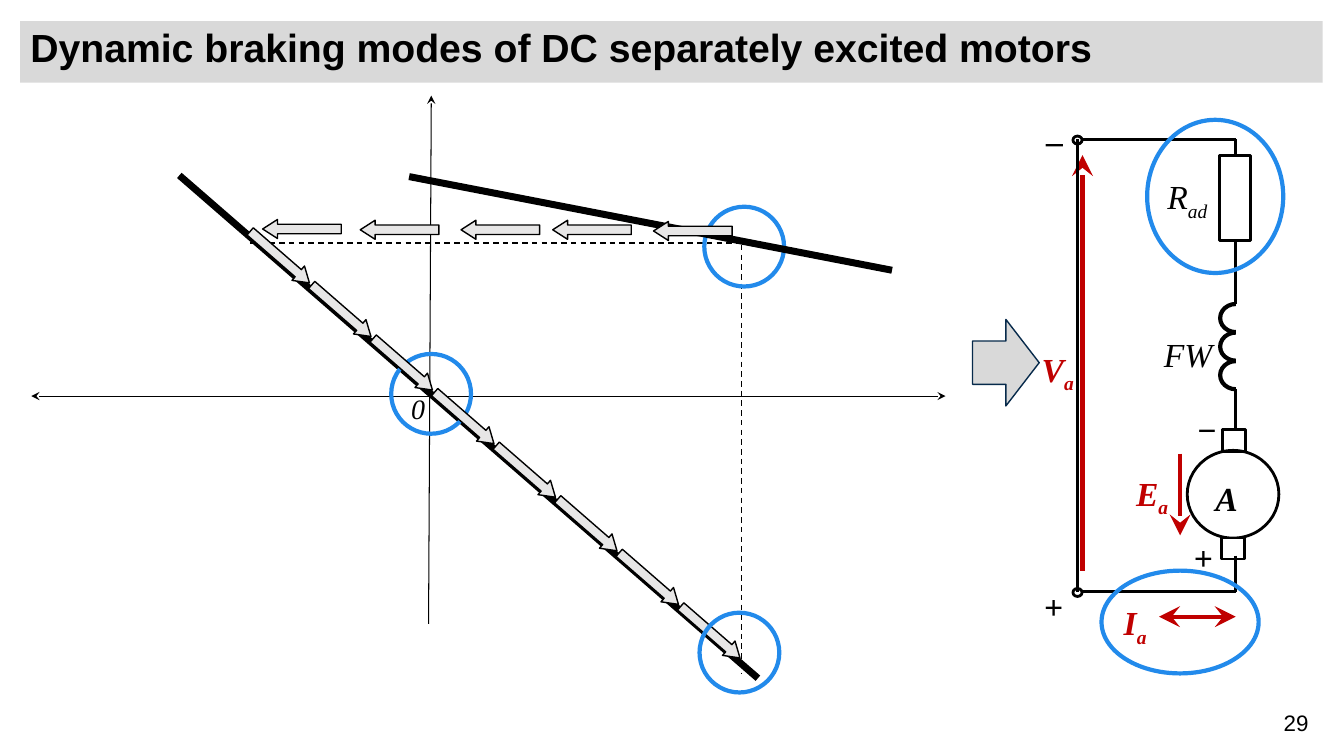
from lxml import etree
from pptx import Presentation
from pptx.dml.color import RGBColor
from pptx.enum import dml, shapes, text
from pptx.oxml import ns
from pptx.util import Cm, Pt

BLACK = RGBColor(0x00, 0x00, 0x00)
WHITE = RGBColor(0xFF, 0xFF, 0xFF)
RED = RGBColor(0xC0, 0x00, 0x00)
BLUE = RGBColor(0x22, 0x8A, 0xEB)
GREY = RGBColor(0xD9, 0xD9, 0xD9)
PALE = RGBColor(0xE7, 0xE6, 0xE6)
NAVY = RGBColor(0x07, 0x2A, 0x4B)
SANS, SERIF = "Arial", "Times New Roman"
KIND = shapes.MSO_SHAPE

# Centre of the right branch of the circuit and its two rails
BRANCH, TOP, BASE = 31.14, 3.51, 14.91


def wire(slide, x1, y1, x2, y2, width=2, color=BLACK, head=False, tail=False,
         size="med", dash=False):
    """Straight line, with stealth arrowheads where asked for."""
    line = slide.shapes.add_connector(
        shapes.MSO_CONNECTOR.STRAIGHT, Cm(x1), Cm(y1), Cm(x2), Cm(y2))
    line.line.width = Pt(width)
    line.line.color.rgb = color
    if dash:
        line.line.dash_style = dml.MSO_LINE.DASH
    props = line.line._get_or_add_ln()
    for tag, shown in (("a:headEnd", head), ("a:tailEnd", tail)):
        if shown:
            etree.SubElement(props, ns.qn(tag), type="stealth", w=size, len=size)
    etree.SubElement(line._element.spPr, ns.qn("a:effectLst"))


def shape(slide, kind, x, y, w, h, fill=None, color=BLACK, width=2):
    """Preset shape without shadow or text."""
    item = slide.shapes.add_shape(kind, Cm(x), Cm(y), Cm(w), Cm(h))
    item.shadow.inherit = False
    if fill is None:
        item.fill.background()
    else:
        item.fill.solid()
        item.fill.fore_color.rgb = fill
    if color is None:
        item.line.fill.background()
    else:
        item.line.color.rgb = color
        item.line.width = Pt(width)
    return item


def ring(slide, x, y, w=2.01, h=2.01):
    shape(slide, KIND.OVAL, x, y, w, h, color=BLUE, width=3)


def block(slide, x, y, turn):
    """Thin block arrow that shows the direction of the process."""
    arrow = shape(slide, KIND.UP_ARROW, x, y, 0.48, 1.98, PALE, width=1)
    arrow.adjustments[0] = 0.5
    arrow.adjustments[1] = 0.781
    arrow.rotation = turn


def write(para, words, size, font=SERIF, color=BLACK, bold=False, slant=False,
          sub=False):
    run = para.add_run()
    run.text = words
    run.font.name = font
    run.font.size = Pt(size)
    run.font.bold = bold
    run.font.italic = slant
    run.font.color.rgb = color
    if sub:
        run.font._element.set("baseline", "-25000")


def label(slide, x, y, w, h, main, sub="", color=BLACK, bold=True, fill=None):
    """Circuit symbol in italics, with an optional subscript."""
    box = slide.shapes.add_textbox(Cm(x), Cm(y), Cm(w), Cm(h))
    if fill is not None:
        box.fill.solid()
        box.fill.fore_color.rgb = fill
    frame = box.text_frame
    frame.word_wrap = True
    frame.margin_top = Cm(0.22)
    frame.margin_right = 0
    para = frame.paragraphs[0]
    para.line_spacing = 1.15
    write(para, main, 24, color=color, bold=bold, slant=True)
    if sub:
        write(para, sub, 24, color=color, bold=bold, slant=True, sub=True)


def head(slide):
    title = slide.shapes.title
    title.left, title.top, title.width, title.height = (
        Cm(0.51), Cm(0.53), Cm(32.82), Cm(1.55))
    title.fill.solid()
    title.fill.fore_color.rgb = GREY
    frame = title.text_frame
    frame.auto_size = text.MSO_AUTO_SIZE.NONE
    frame.vertical_anchor = text.MSO_ANCHOR.TOP
    frame.margin_top = Cm(0.2)
    para = frame.paragraphs[0]
    para.alignment = text.PP_ALIGN.LEFT
    para.line_spacing = 0.9
    para.space_before = Pt(0)
    write(para, "Dynamic braking modes of DC separately excited motors", 28,
          SANS, bold=True)


def note(slide, x, y, w, h, words, size, font, slant, wrap):
    box = slide.shapes.add_textbox(Cm(x), Cm(y), Cm(w), Cm(h))
    box.text_frame.word_wrap = wrap
    para = box.text_frame.paragraphs[0]
    if wrap:
        para.alignment = text.PP_ALIGN.CENTER
    write(para, words, size, font, slant=slant)


def graph(slide):
    # Axes and origin
    wire(slide, 10.87, 2.41, 10.8, 15.72, 0.75, head=True)
    wire(slide, 0.79, 9.98, 23.83, 9.98, 0.75, head=True, tail=True)
    note(slide, 10.11, 9.73, 1.14, 1.35, "0", 20, SERIF, True, False)
    # Guides
    wire(slide, 18.69, 6.17, 18.69, 16.97, 1, dash=True)
    wire(slide, 6.3, 6.12, 18.69, 6.12, 1, dash=True)
    # Motor and braking characteristics
    ring(slide, 17.75, 5.21)
    wire(slide, 4.52, 4.42, 19.1, 17.09, 5)
    wire(slide, 10.31, 4.45, 22.48, 6.81, 5)
    ring(slide, 9.86, 8.92)
    # Switch to braking, then slowing down along the line
    for x, y in ((17.22, 4.83), (14.68, 4.8), (12.37, 4.8), (9.83, 4.8), (7.37, 4.78)):
        block(slide, x, y, 270)
    for step in range(8):
        block(slide, 6.81 + 1.55 * step, 5.49 + 1.35 * step, 131)
    ring(slide, 17.63, 15.44)


def circuit(slide):
    # Field winding: three turns with their right half covered
    for turn in (2, 1, 0):
        shape(slide, KIND.OVAL, 30.75, 7.66 + 0.72 * turn, 0.79, 0.71, WHITE, width=3)
    shape(slide, KIND.RECTANGLE, 31.15, 6.18, 1.17, 4.34, WHITE, None)
    # Signs and symbols
    label(slide, 29.91, 9.94, 1.19, 1.63, "−", fill=WHITE)
    label(slide, 29.83, 13.17, 1.19, 1.63, "+", fill=WHITE)
    label(slide, 26.06, 14.4, 1.17, 1.63, "+")
    label(slide, 26.12, 2.65, 1.19, 1.63, "–")
    label(slide, 29.17, 4.05, 1.75, 2.18, "R", "ad", bold=False)
    label(slide, 29.08, 8.05, 1.83, 1.32, "FW", bold=False)
    label(slide, 30.38, 11.66, 1.42, 1.63, "A")
    label(slide, 28.07, 14.78, 1.68, 1.63, "I", "a", RED)
    label(slide, 28.38, 11.52, 1.78, 2.16, "Е", "a", RED)
    label(slide, 26, 8.39, 1.78, 2.16, "V", "a", RED)
    # Resistor, armature and brushes
    shape(slide, KIND.RECTANGLE, 30.73, 3.91, 0.79, 2.16)
    shape(slide, KIND.RECTANGLE, 30.8, 10.83, 0.58, 0.56)
    shape(slide, KIND.OVAL, 29.92, 11.35, 2.31, 2.21)
    shape(slide, KIND.RECTANGLE, 30.78, 13.56, 0.58, 0.53, WHITE)
    # Wires of the branch and both rails with their terminals
    for y1, y2 in ((TOP, 3.91), (6.07, 7.65), (9.8, 10.85), (14, BASE)):
        wire(slide, BRANCH, y1, BRANCH, y2)
    for rail in (TOP, BASE):
        shape(slide, KIND.OVAL, 27.04, rail - 0.08, 0.23, 0.2)
        wire(slide, BRANCH, rail, 27.25, rail)
    # Voltage, back EMF and current arrows
    for ends in ((27.28, 14.38, 27.28, 3.91), (29.74, 11.43, 29.74, 13.49),
                 (29.41, 15.54, BRANCH, 15.54), (30.94, 15.54, 29.21, 15.54)):
        wire(slide, *ends, 3, RED, tail=True, size="lg")
    wire(slide, 27.15, BASE, 27.15, TOP, 2.5)
    # Highlights
    ring(slide, 27.76, 14.38, 3.96, 2.59)
    ring(slide, 28.91, 3.02, 3.43, 3.86)


def main():
    deck = Presentation()
    deck.slide_width, deck.slide_height = Cm(33.87), Cm(19.05)
    slide = deck.slides.add_slide(deck.slide_layouts[5])
    head(slide)
    graph(slide)
    shape(slide, KIND.RIGHT_ARROW, 24.51, 8.05, 1.68, 2.18, GREY, NAVY, 1)
    circuit(slide)
    # Page number
    note(slide, 31.85, 17.75, 1.63, 0.94, "29", 16, SANS, False, True)
    deck.save("out.pptx")


if __name__ == "__main__":
    main()
